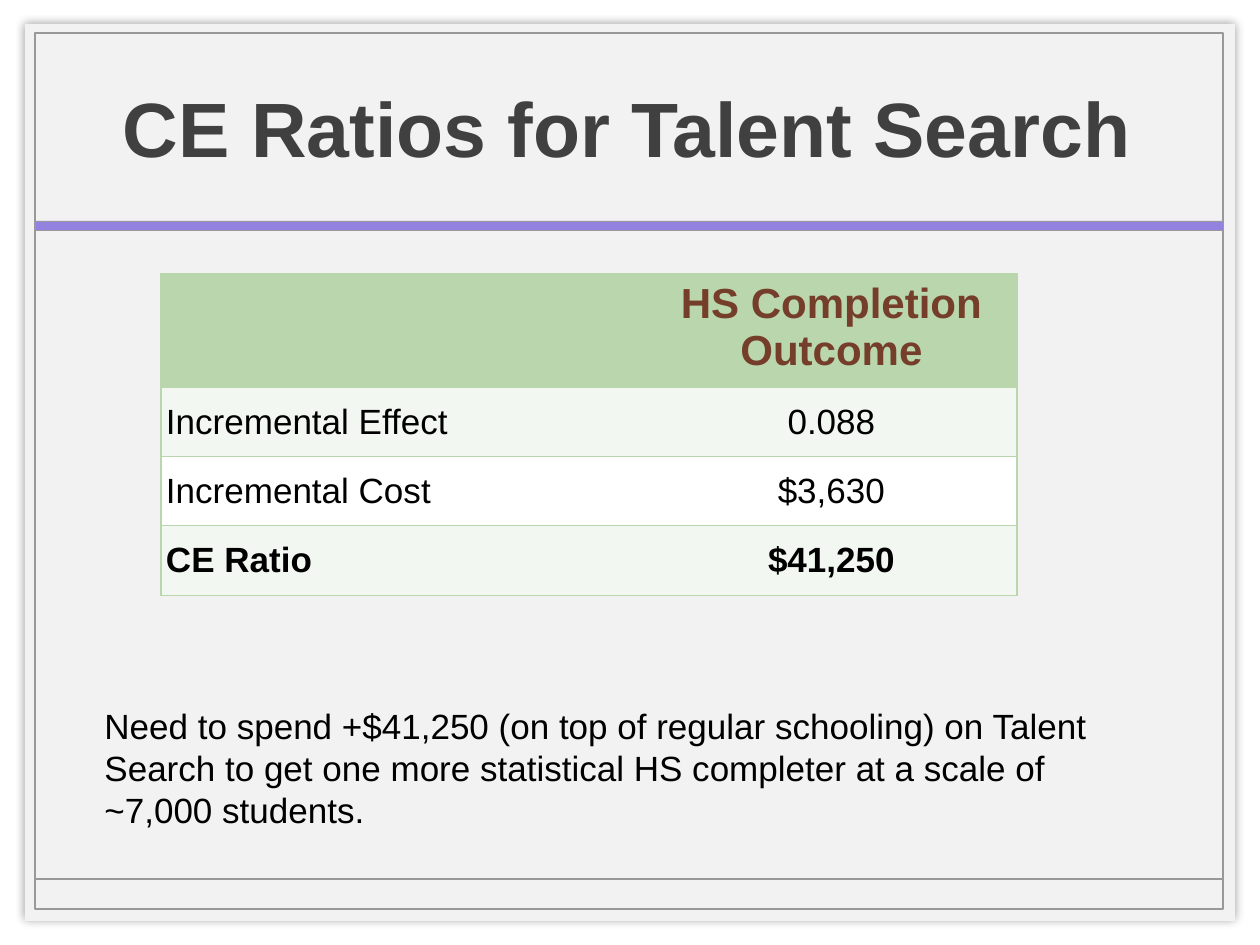
from lxml import etree
from pptx import Presentation
from pptx import util as u
from pptx.dml.color import RGBColor
from pptx.enum import shapes, text
from pptx.oxml.ns import qn

PX = 914400 // 126
FONT = "Arial"
BLACK = RGBColor(0x00, 0x00, 0x00)
WHITE = RGBColor(0xFF, 0xFF, 0xFF)
PANEL = RGBColor(0xF2, 0xF2, 0xF2)
FRAME = RGBColor(0x99, 0x99, 0x99)
PURPLE = RGBColor(0x94, 0x82, 0xE0)
TITLE = RGBColor(0x40, 0x40, 0x40)
GREEN = RGBColor(0xBA, 0xD6, 0xAD)
PALE_GREEN = RGBColor(0xF3, 0xF7, 0xF1)
BROWN = RGBColor(0x75, 0x3E, 0x2A)
NO_TABLE_STYLE = "{2D5ABB26-0587-4C30-8999-92F81FD0307C}"

LEFT, RIGHT = 35, 1223
COL_WIDTHS = [485, 371]
ROW_HEIGHTS = [107, 69, 69, 70]
ROWS = [
    ("", "HS Completion\nOutcome"),
    ("Incremental Effect", "0.088"),
    ("Incremental Cost", "$3,630"),
    ("CE Ratio", "$41,250"),
]
ROW_FILLS = [GREEN, PALE_GREEN, WHITE, PALE_GREEN]


def px(*values):
    return [u.Emu(v * PX) for v in values]


def add_rect(slide, box, fill=None, line=None, width=1):
    sp = slide.shapes.add_shape(shapes.MSO_SHAPE.RECTANGLE, *px(*box))
    sp.shadow.inherit = False
    if fill is None:
        sp.fill.background()
    else:
        sp.fill.solid()
        sp.fill.fore_color.rgb = fill
    if line is None:
        sp.line.fill.background()
    else:
        sp.line.color.rgb = line
        sp.line.width = u.Pt(width)
    return sp


def add_glow_shadow(sp):
    """Give the shape a soft black shadow that is even on all sides."""
    effects = sp._element.spPr.find(qn("a:effectLst"))
    shadow = etree.SubElement(effects, qn("a:outerShdw"), blurRad=str(u.Pt(5)),
                              dist="0", dir="0", algn="ctr", rotWithShape="0")
    color = etree.SubElement(shadow, qn("a:srgbClr"), val=str(BLACK))
    etree.SubElement(color, qn("a:alpha"), val="40000")


def add_line(slide, x1, y1, x2, y2):
    line = slide.shapes.add_connector(shapes.MSO_CONNECTOR.STRAIGHT, *px(x1, y1, x2, y2))
    line.line.color.rgb = FRAME
    line.line.width = u.Pt(1)
    etree.SubElement(line._element.spPr, qn("a:effectLst"))


def style_text(tf, size, color, bold=False, align=text.PP_ALIGN.LEFT):
    for p in tf.paragraphs:
        p.alignment = align
        for r in p.runs:
            r.font.name = FONT
            r.font.size = u.Pt(size)
            r.font.bold = bold
            r.font.color.rgb = color


def add_text(slide, box, content, size, color, bold=False,
             align=text.PP_ALIGN.LEFT, anchor=text.MSO_ANCHOR.TOP):
    tf = slide.shapes.add_textbox(*px(*box)).text_frame
    tf.word_wrap = True
    tf.vertical_anchor = anchor
    tf.text = content
    style_text(tf, size, color, bold, align)


def add_borders(cell, sides):
    tc_pr = cell._tc.get_or_add_tcPr()
    for side in sides:
        ln = etree.SubElement(tc_pr, qn(f"a:ln{side}"), w=str(u.Pt(1)))
        fill = etree.SubElement(ln, qn("a:solidFill"))
        etree.SubElement(fill, qn("a:srgbClr"), val=str(GREEN))


def fill_cell(cell, content, row, col):
    header = row == 0
    add_borders(cell, "RTB" if col else "LTB")
    cell.fill.solid()
    cell.fill.fore_color.rgb = ROW_FILLS[row]
    cell.margin_left = cell.margin_right = u.Inches(0.04)
    cell.margin_top = cell.margin_bottom = u.Inches(0.05)
    cell.vertical_anchor = text.MSO_ANCHOR.TOP if header else text.MSO_ANCHOR.MIDDLE
    cell.text_frame.text = content
    style_text(cell.text_frame, 24 if header else 20, BROWN if header else BLACK,
               bold=header or row == len(ROWS) - 1,
               align=text.PP_ALIGN.CENTER if col else text.PP_ALIGN.LEFT)


def add_ratio_table(slide, left, top):
    box = px(left, top, sum(COL_WIDTHS), sum(ROW_HEIGHTS))
    table = slide.shapes.add_table(len(ROWS), len(COL_WIDTHS), *box).table
    table._tbl.tblPr.find(qn("a:tableStyleId")).text = NO_TABLE_STYLE
    for column, width in zip(table.columns, px(*COL_WIDTHS)):
        column.width = width
    for i, height in enumerate(px(*ROW_HEIGHTS)):
        table.rows[i].height = height
        for j, content in enumerate(ROWS[i]):
            fill_cell(table.cell(i, j), content, i, j)


def main():
    prs = Presentation()
    prs.slide_width, prs.slide_height = u.Inches(10), u.Inches(7.5)
    slide = prs.slides.add_slide(prs.slide_layouts[6])

    add_glow_shadow(add_rect(slide, (25, 24, 1210, 897), fill=PANEL))
    add_rect(slide, (LEFT, 33, RIGHT - LEFT, 876), line=FRAME)
    add_line(slide, LEFT, 879, RIGHT, 879)
    add_rect(slide, (LEFT, 221, RIGHT - LEFT, 9), PURPLE, FRAME, 0.25)

    add_text(slide, (92, 34, 1071, 185), "CE Ratios for Talent Search", 44, TITLE,
             bold=True, align=text.PP_ALIGN.CENTER, anchor=text.MSO_ANCHOR.MIDDLE)
    add_ratio_table(slide, 161, 274)
    add_text(slide, (92, 698, 1043, 140),
             "Need to spend +$41,250 (on top of regular schooling) on Talent Search "
             "to get one more statistical HS completer at a scale of ~7,000 students.",
             20, BLACK)
    prs.save("out.pptx")


if __name__ == "__main__":
    main()
